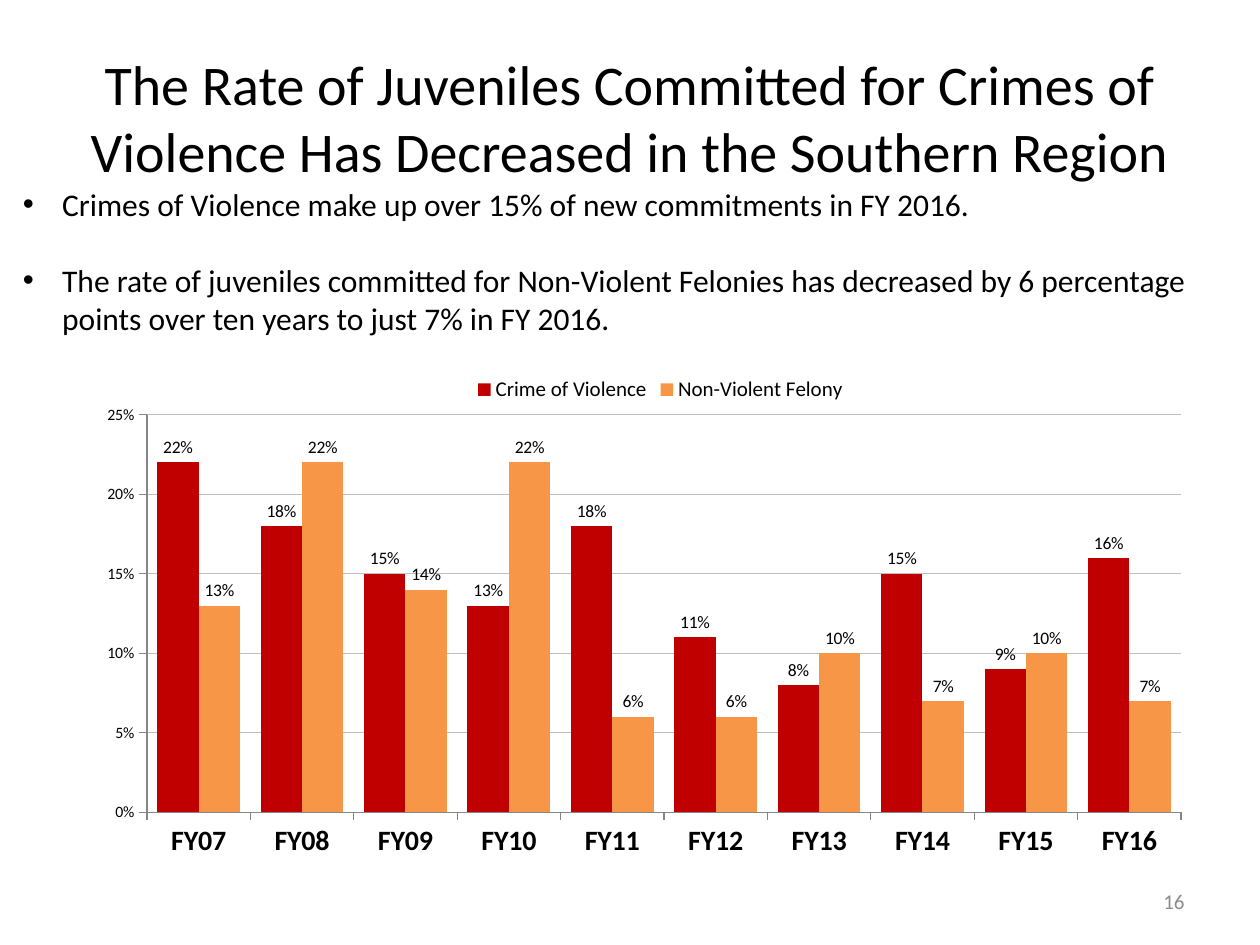
"""Build a slide on juvenile commitment rates with two bullets and a column chart."""
from dataclasses import dataclass

from lxml import etree
from pptx import Presentation
from pptx.chart.data import CategoryChartData
from pptx.dml.color import RGBColor
from pptx.enum.chart import XL_CHART_TYPE, XL_LABEL_POSITION, XL_LEGEND_POSITION, XL_TICK_MARK
from pptx.enum.text import MSO_ANCHOR, MSO_AUTO_SIZE, PP_ALIGN
from pptx.oxml.ns import qn
from pptx.util import Pt

CLUSTERED = XL_CHART_TYPE.COLUMN_CLUSTERED
OUTSIDE_END = XL_LABEL_POSITION.OUTSIDE_END
LEGEND_TOP = XL_LEGEND_POSITION.TOP
TICK_OUT, TICK_NONE = XL_TICK_MARK.OUTSIDE, XL_TICK_MARK.NONE
TOP, MIDDLE = MSO_ANCHOR.TOP, MSO_ANCHOR.MIDDLE
NO_FIT = MSO_AUTO_SIZE.NONE
LEFT, CENTER, RIGHT = PP_ALIGN.LEFT, PP_ALIGN.CENTER, PP_ALIGN.RIGHT

FONT = "Calibri"
COLORS = {"text": "000000", "number": "8C8C8C", "grid": "BFBFBF", "axis": "868686",
          "violence": "C00000", "felony": "F79646"}
TITLE = "The Rate of Juveniles Committed for Crimes of Violence Has Decreased in the Southern Region"
BULLETS = [
    "Crimes of Violence make up over 15% of new commitments in FY 2016.",
    "The rate of juveniles committed for Non-Violent Felonies has decreased by 6 percentage "
    "points over ten years to just 7% in FY 2016.",
]
YEARS = [f"FY{year:02}" for year in range(7, 17)]


@dataclass
class Box:
    left: float
    top: float
    width: float
    height: float

    def lengths(self) -> tuple:
        return Pt(self.left), Pt(self.top), Pt(self.width), Pt(self.height)


@dataclass
class Series:
    name: str
    color: str
    percents: list[int]


SERIES = [
    Series("Crime of Violence", "violence", [22, 18, 15, 13, 18, 11, 8, 15, 9, 16]),
    Series("Non-Violent Felony", "felony", [13, 22, 14, 22, 6, 6, 10, 7, 10, 7]),
]


def rgb(name: str) -> RGBColor:
    return RGBColor.from_string(COLORS[name])


def format_font(font, size: float, color: str = "text", bold: bool = False) -> None:
    font.name, font.size, font.bold = FONT, Pt(size), bold
    font.color.rgb = rgb(color)


def write_text(shape, box: Box, paragraphs: list[str], *, size: float, color: str = "text",
               align=LEFT, anchor=TOP, hanging: float = 0, gap: float = 0) -> None:
    shape.left, shape.top, shape.width, shape.height = box.lengths()
    frame = shape.text_frame
    frame.word_wrap, frame.auto_size, frame.vertical_anchor = True, NO_FIT, anchor
    for index, text in enumerate(paragraphs):
        para = frame.add_paragraph() if index else frame.paragraphs[0]
        para.alignment = align
        para.space_before = Pt(gap if index else 0)
        if hanging:
            properties = para._p.get_or_add_pPr()
            properties.set("marL", str(Pt(hanging)))
            properties.set("indent", str(-Pt(hanging)))
        span = para.add_run()
        span.text = text
        format_font(span.font, size, color)


def set_layout(parent, position: int, **values) -> None:
    for old in parent.findall(qn("c:layout")):
        parent.remove(old)
    layout = etree.Element(qn("c:layout"))
    parent.insert(position, layout)
    manual = etree.SubElement(layout, qn("c:manualLayout"))
    for name, value in values.items():
        etree.SubElement(manual, qn(f"c:{name}")).set("val", str(value))


def format_axis(axis, size: float, bold: bool = False) -> None:
    axis.major_tick_mark, axis.minor_tick_mark = TICK_OUT, TICK_NONE
    axis.format.line.color.rgb = rgb("axis")
    axis.format.line.width = Pt(0.75)
    format_font(axis.tick_labels.font, size, bold=bold)


def add_rate_chart(page, box: Box, all_series: list[Series]) -> None:
    data = CategoryChartData(number_format="0%")
    data.categories = YEARS
    for series in all_series:
        data.add_series(series.name, [percent / 100 for percent in series.percents])
    chart = page.shapes.add_chart(CLUSTERED, *box.lengths(), data).chart
    format_font(chart.font, 10)
    chart.has_title = False

    chart.has_legend = True
    legend = chart.legend
    legend.position, legend.include_in_layout = LEGEND_TOP, False
    format_font(legend.font, 12)
    set_layout(legend._element, 1, xMode="edge", yMode="edge", x=0.36, y=0.03)

    plot = chart.plots[0]
    plot.gap_width, plot.overlap, plot.vary_by_categories = 50, 0, False
    set_layout(plot._element.getparent(), 0, layoutTarget="inner", xMode="edge", yMode="edge",
               x=0.074, y=0.112, w=0.912, h=0.766)

    for drawn, series in zip(plot.series, all_series):
        drawn.format.fill.solid()
        drawn.format.fill.fore_color.rgb = rgb(series.color)
        drawn.invert_if_negative = False
        labels = drawn.data_labels
        labels.show_value, labels.position = True, OUTSIDE_END
        labels.number_format, labels.number_format_is_linked = "0%", False
        format_font(labels.font, 10)

    format_axis(chart.category_axis, 16, bold=True)
    rates = chart.value_axis
    format_axis(rates, 9)
    rates.minimum_scale, rates.maximum_scale, rates.major_unit = 0, 0.25, 0.05
    rates.tick_labels.number_format = "0%"
    rates.tick_labels.number_format_is_linked = False
    rates.has_major_gridlines = True
    rates.major_gridlines.format.line.color.rgb = rgb("grid")
    rates.major_gridlines.format.line.width = Pt(0.75)


def main() -> None:
    deck = Presentation()
    deck.slide_width, deck.slide_height = Pt(720), Pt(540)
    page = deck.slides.add_slide(deck.slide_layouts[1])
    write_text(page.shapes.title, Box(36, 21.6, 648, 90), [TITLE],
               size=32, align=CENTER, anchor=MIDDLE)
    write_text(page.placeholders[1], Box(5.8, 102.2, 696, 94.3), BULLETS,
               size=18, hanging=22.5, gap=21.6)
    add_rate_chart(page, Box(36, 203.8, 648, 296.6), SERIES)
    number_box = Box(516, 500.5, 168, 28.8)
    write_text(page.shapes.add_textbox(*number_box.lengths()), number_box, ["16"],
               size=12, color="number", align=RIGHT, anchor=MIDDLE)
    deck.save("out.pptx")


if __name__ == "__main__":
    main()
